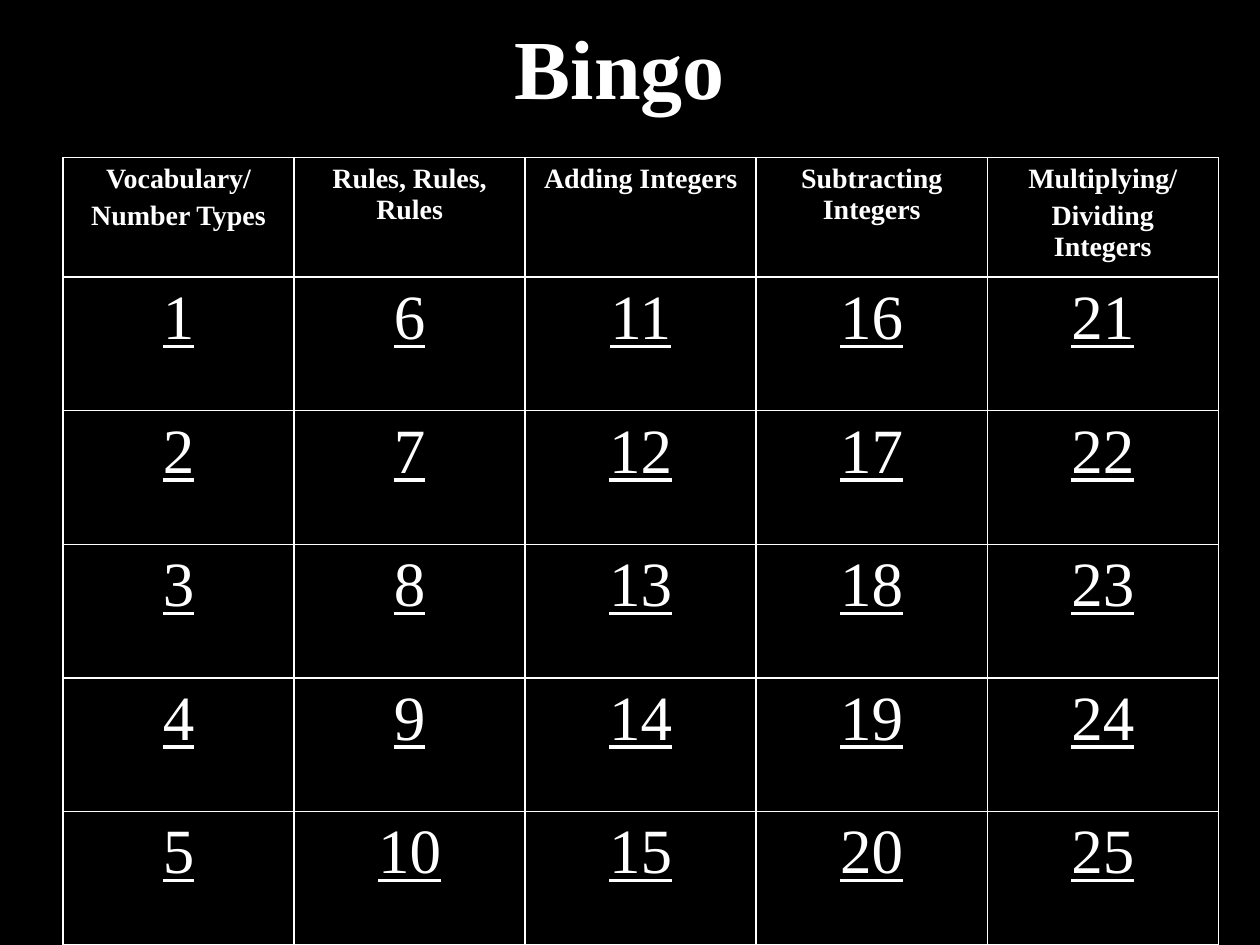
from dataclasses import dataclass

from lxml.etree import SubElement
from pptx import Presentation
from pptx.dml.color import RGBColor as Rgb
from pptx.enum.text import MSO_ANCHOR as Anchor, PP_ALIGN as Align
from pptx.oxml.ns import qn
from pptx.util import Inches, Pt

COLORS = {"background": "000000", "chalk": "FFFFFF"}
FONT = "Times New Roman"
COLUMN_WIDTH = 9.17 / 5
HEADER_HEIGHT = 0.95
NUMBER_HEIGHT = 1.06
NUMBERS_PER_TOPIC = 5


@dataclass(frozen=True)
class Topic:
    heading: str
    first_number: int


HEADINGS = [
    "Vocabulary/\nNumber Types",
    "Rules, Rules, Rules",
    "Adding Integers",
    "Subtracting Integers",
    "Multiplying/\nDividing Integers",
]
TOPICS = [
    Topic(heading, 1 + index * NUMBERS_PER_TOPIC)
    for index, heading in enumerate(HEADINGS)
]


def write_text(frame, text: str, *, size: int, bold: bool = False,
               underline: bool = False, space_percent: int = 0) -> None:
    frame.text = text
    for paragraph in frame.paragraphs:
        paragraph.alignment = Align.CENTER
        paragraph.space_before = Pt(0)
        if space_percent:
            spacing = paragraph._p.pPr.find(qn("a:spcBef"))
            spacing.remove(spacing[0])
            SubElement(spacing, qn("a:spcPct"), val=str(space_percent * 1000))
        for run in paragraph.runs:
            font = run.font
            font.name = FONT
            font.size = Pt(size)
            font.bold = bold
            font.underline = underline
            font.color.rgb = Rgb.from_string(COLORS["chalk"])


def style_cell(cell) -> None:
    properties = cell._tc.get_or_add_tcPr()
    for side in ("lnL", "lnR", "lnT", "lnB"):
        border = SubElement(properties, qn(f"a:{side}"), w=str(Pt(1)))
        line_fill = SubElement(border, qn("a:solidFill"))
        SubElement(line_fill, qn("a:srgbClr"), val=COLORS["chalk"])
    cell.fill.solid()
    cell.fill.fore_color.rgb = Rgb.from_string(COLORS["background"])


def add_title(slide, text: str) -> None:
    title = slide.shapes.title
    title.left, title.top = Inches(1.67), Inches(0)
    title.width, title.height = Inches(6.5), Inches(0.9)
    frame = title.text_frame
    frame.vertical_anchor = Anchor.TOP
    frame.margin_top, frame.margin_bottom = Inches(0.12), Inches(0)
    write_text(frame, text, size=48, bold=True)


def add_board(slide, topics: list[Topic]) -> None:
    heights = [HEADER_HEIGHT] + [NUMBER_HEIGHT] * NUMBERS_PER_TOPIC
    board = slide.shapes.add_table(
        len(heights), len(topics), Inches(0.5), Inches(1.25),
        Inches(COLUMN_WIDTH * len(topics)), Inches(sum(heights)),
    ).table
    for row, height in zip(board.rows, heights):
        row.height = Inches(height)
    for column, topic in enumerate(topics):
        board.columns[column].width = Inches(COLUMN_WIDTH)
        write_text(board.cell(0, column).text_frame, topic.heading,
                   size=16, bold=True, space_percent=20)
        for offset in range(NUMBERS_PER_TOPIC):
            write_text(board.cell(offset + 1, column).text_frame,
                       str(topic.first_number + offset),
                       size=36, underline=True, space_percent=20)
    for cell in board.iter_cells():
        style_cell(cell)


def main() -> None:
    deck = Presentation()
    deck.slide_width, deck.slide_height = Inches(10), Inches(7.5)
    slide = deck.slides.add_slide(deck.slide_layouts[5])
    slide.background.fill.solid()
    slide.background.fill.fore_color.rgb = Rgb.from_string(COLORS["background"])
    add_title(slide, "Bingo")
    add_board(slide, TOPICS)
    deck.save("out.pptx")


if __name__ == "__main__":
    main()
